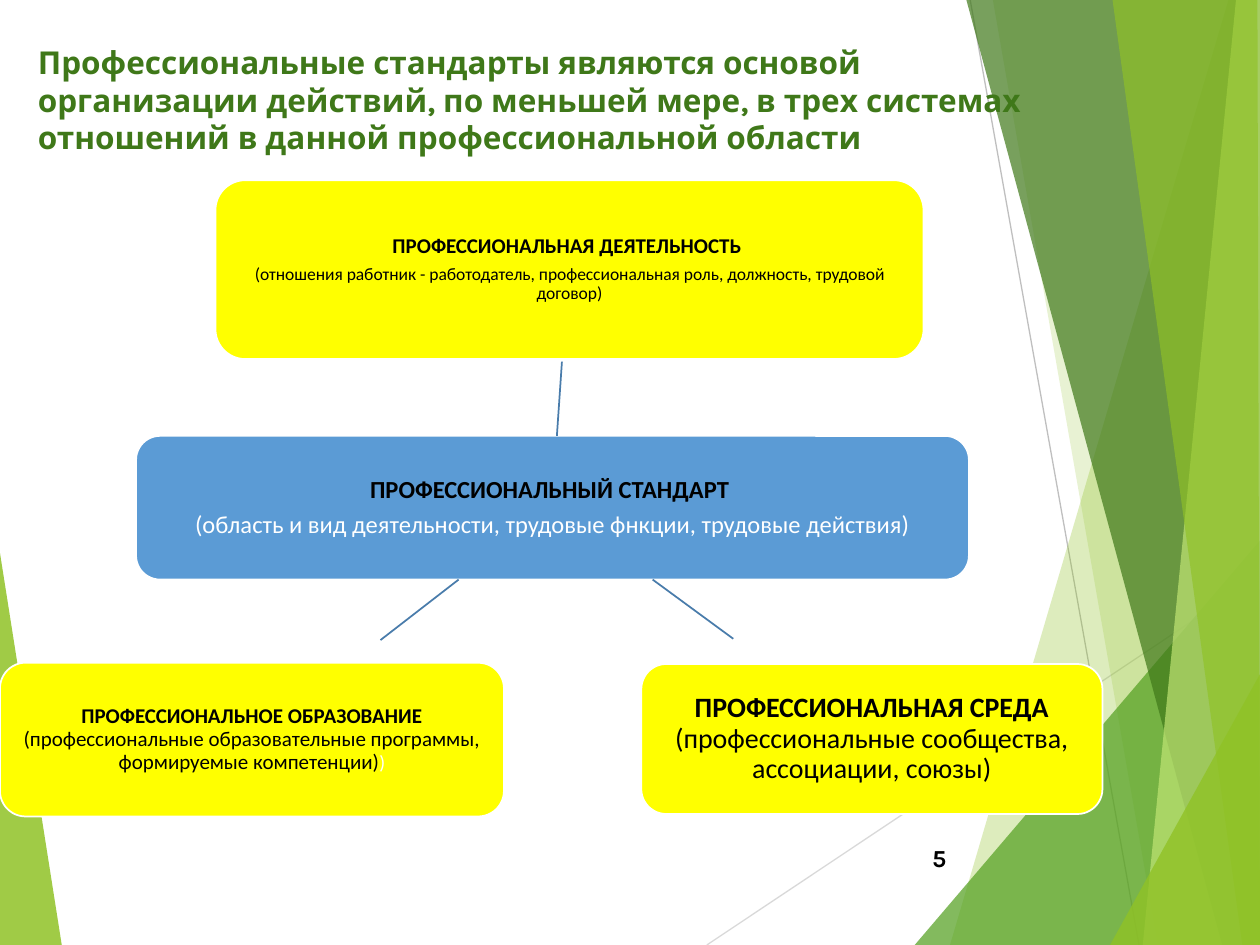
"""Build a slide on the three systems of relations around a professional standard."""
from lxml import etree
from pptx import Presentation
from pptx.dml.color import RGBColor
from pptx.enum.shapes import MSO_CONNECTOR, MSO_SHAPE
from pptx.enum.text import MSO_ANCHOR, MSO_AUTO_SIZE, PP_ALIGN
from pptx.oxml.ns import qn
from pptx.util import Inches, Pt

STRAIGHT = MSO_CONNECTOR.STRAIGHT
ROUNDED = MSO_SHAPE.ROUNDED_RECTANGLE
TOP, MIDDLE = MSO_ANCHOR.TOP, MSO_ANCHOR.MIDDLE
LEFT, CENTER, RIGHT = PP_ALIGN.LEFT, PP_ALIGN.CENTER, PP_ALIGN.RIGHT
NO_AUTOFIT = MSO_AUTO_SIZE.NONE

BLACK = RGBColor(0x00, 0x00, 0x00)
WHITE = RGBColor(0xFF, 0xFF, 0xFF)
YELLOW = RGBColor(0xFF, 0xFF, 0x00)
BLUE = RGBColor(0x5B, 0x9B, 0xD5)
LINK_BLUE = RGBColor(0x49, 0x7C, 0xAB)
LIME = RGBColor(0x90, 0xC2, 0x26)
PALE_LIME = RGBColor(0xC0, 0xE4, 0x74)
GREEN = RGBColor(0x54, 0xA0, 0x21)
DARK_GREEN = RGBColor(0x3F, 0x78, 0x19)
LIGHT_GRAY = RGBColor(0xD9, 0xD9, 0xD9)
GRAY = RGBColor(0xBF, 0xBF, 0xBF)

WIDTH, HEIGHT = 10, 7.5

BACKGROUND_LINES = [
    ((5.61, HEIGHT), (WIDTH, 4.57), LIGHT_GRAY),
    ((7.7, 0), (9.04, HEIGHT), GRAY),
]
FACETS = [
    ([(0, 4.39), (0.49, HEIGHT), (0, HEIGHT)], LIME, 85),
    ([(9.75, 0), (7.54, HEIGHT), (WIDTH, HEIGHT), (WIDTH, 0)], LIME, 30),
    ([(7.88, 0), (9.19, HEIGHT), (WIDTH, HEIGHT), (WIDTH, 0)], LIME, 20),
    ([(7.26, HEIGHT), (WIDTH, 4.29), (WIDTH, HEIGHT)], GREEN, 72),
    ([(7.67, 0), (9.7, HEIGHT), (WIDTH, HEIGHT), (WIDTH, 0)], DARK_GREEN, 70),
    ([(9.81, 0), (9.07, HEIGHT), (WIDTH, HEIGHT), (WIDTH, 0)], PALE_LIME, 70),
    ([(8.83, 0), (9.86, HEIGHT), (WIDTH, HEIGHT), (9.98, 0)], LIME, 65),
    ([(8.81, HEIGHT), (WIDTH, 5.35), (WIDTH, HEIGHT)], LIME, 80),
]
TITLE = ("Профессиональные стандарты являются основой организации действий, "
         "по меньшей мере, в трех системах отношений в данной профессиональной области")
BLOCKS = [
    ((1.08, 3.46, 6.61, 1.14), BLUE, [
        [("ПРОФЕССИОНАЛЬНЫЙ СТАНДАРТ ", 14, True, BLACK)],
        [("(область и вид деятельности, трудовые фнкции, трудовые действия)",
          14, False, WHITE)]]),
    ((1.71, 1.43, 5.62, 1.42), YELLOW, [
        [("ПРОФЕССИОНАЛЬНАЯ ДЕЯТЕЛЬНОСТЬ ", 12, True, BLACK)],
        [("(отношения работник - работодатель, профессиональная роль, должность, "
          "трудовой договор)", 10, False, BLACK)]]),
    ((5.09, 5.27, 3.66, 1.19), YELLOW, [
        [("ПРОФЕССИОНАЛЬНАЯ СРЕДА ", 16, True, BLACK),
         ("(профессиональные сообщества, ассоциации, союзы)", 16, False, BLACK)]]),
    ((0, 5.26, 4, 1.22), YELLOW, [
        [("ПРОФЕССИОНАЛЬНОЕ ОБРАЗОВАНИЕ ", 12, True, BLACK),
         ("(профессиональные образовательные программы, формируемые компетенции)",
          12, False, BLACK),
         (")", 11, False, WHITE)]]),
]
LINKS = [((4.42, 3.46), (4.46, 2.87)), ((5.18, 4.6), (5.82, 5.07)), ((3.64, 4.6), (3.02, 5.08))]


def add_text(paragraph, text, *, size, color, font, bold=False):
    run = paragraph.add_run()
    run.text = text
    run.font.name = font
    run.font.size = Pt(size)
    run.font.bold = bold
    run.font.color.rgb = color


def inches(values):
    return [Inches(value) for value in values]


class SlideBuilder:
    heading_font = "Karla"
    body_font = "Calibri"
    inset = Inches(0.04)

    def __init__(self, slide):
        self.slide = slide
        self.shapes = slide.shapes

    def facet(self, points, color, opacity):
        start, *rest = [inches(point) for point in points]
        builder = self.shapes.build_freeform(*start)
        builder.add_line_segments(rest, close=True)
        shape = builder.convert_to_shape()
        shape.shadow.inherit = False
        shape.line.fill.background()
        shape.fill.solid()
        shape.fill.fore_color.rgb = color
        color_element = shape.fill._xPr.find(qn("a:solidFill"))[0]
        etree.SubElement(color_element, qn("a:alpha"), val=str(opacity * 1000))

    def line(self, start, end, color, width):
        connector = self.shapes.add_connector(STRAIGHT, *inches(start + end))
        connector.line.color.rgb = color
        connector.line.width = Pt(width)
        etree.SubElement(connector._element.spPr, qn("a:effectLst"))

    def title(self, text, box):
        title = self.shapes.title
        title.left, title.top, title.width, title.height = inches(box)
        frame = title.text_frame
        frame.auto_size = NO_AUTOFIT
        frame.word_wrap = True
        frame.vertical_anchor = TOP
        paragraph = frame.paragraphs[0]
        paragraph.alignment = LEFT
        add_text(paragraph, text, size=18, color=DARK_GREEN, font=self.heading_font, bold=True)
        self.shapes._spTree.append(title._element)

    def page_number(self, text, box):
        frame = self.shapes.add_textbox(*inches(box)).text_frame
        frame.word_wrap = True
        frame.vertical_anchor = MIDDLE
        paragraph = frame.paragraphs[0]
        paragraph.alignment = RIGHT
        add_text(paragraph, text, size=14, color=BLACK, font=self.heading_font, bold=True)

    def block(self, box, fill, paragraphs):
        shape = self.shapes.add_shape(ROUNDED, *inches(box))
        shape.shadow.inherit = False
        shape.fill.solid()
        shape.fill.fore_color.rgb = fill
        shape.line.color.rgb = WHITE
        shape.line.width = Pt(1)
        frame = shape.text_frame
        frame.word_wrap = True
        frame.vertical_anchor = MIDDLE
        frame.margin_left = frame.margin_right = self.inset
        frame.margin_top = frame.margin_bottom = self.inset
        for index, runs in enumerate(paragraphs):
            paragraph = frame.add_paragraph() if index else frame.paragraphs[0]
            paragraph.alignment = CENTER
            paragraph.line_spacing = 0.9
            paragraph.space_after = Pt(round(runs[0][1] * 0.35, 1))
            for text, size, bold, color in runs:
                add_text(paragraph, text, size=size, color=color, font=self.body_font, bold=bold)


def main():
    presentation = Presentation()
    presentation.slide_width, presentation.slide_height = inches((WIDTH, HEIGHT))
    builder = SlideBuilder(presentation.slides.add_slide(presentation.slide_layouts[5]))
    first_facet, *right_facets = FACETS
    builder.facet(*first_facet)
    for start, end, color in BACKGROUND_LINES:
        builder.line(start, end, color, 0.75)
    for facet in right_facets:
        builder.facet(*facet)
    builder.title(TITLE, (0.2, 0.29, 8.27, 1.02))
    builder.page_number("5", (7.05, 6.61, 0.56, 0.4))
    for block in BLOCKS:
        builder.block(*block)
    for start, end in LINKS:
        builder.line(start, end, LINK_BLUE, 1)
    presentation.save("out.pptx")


if __name__ == "__main__":
    main()
